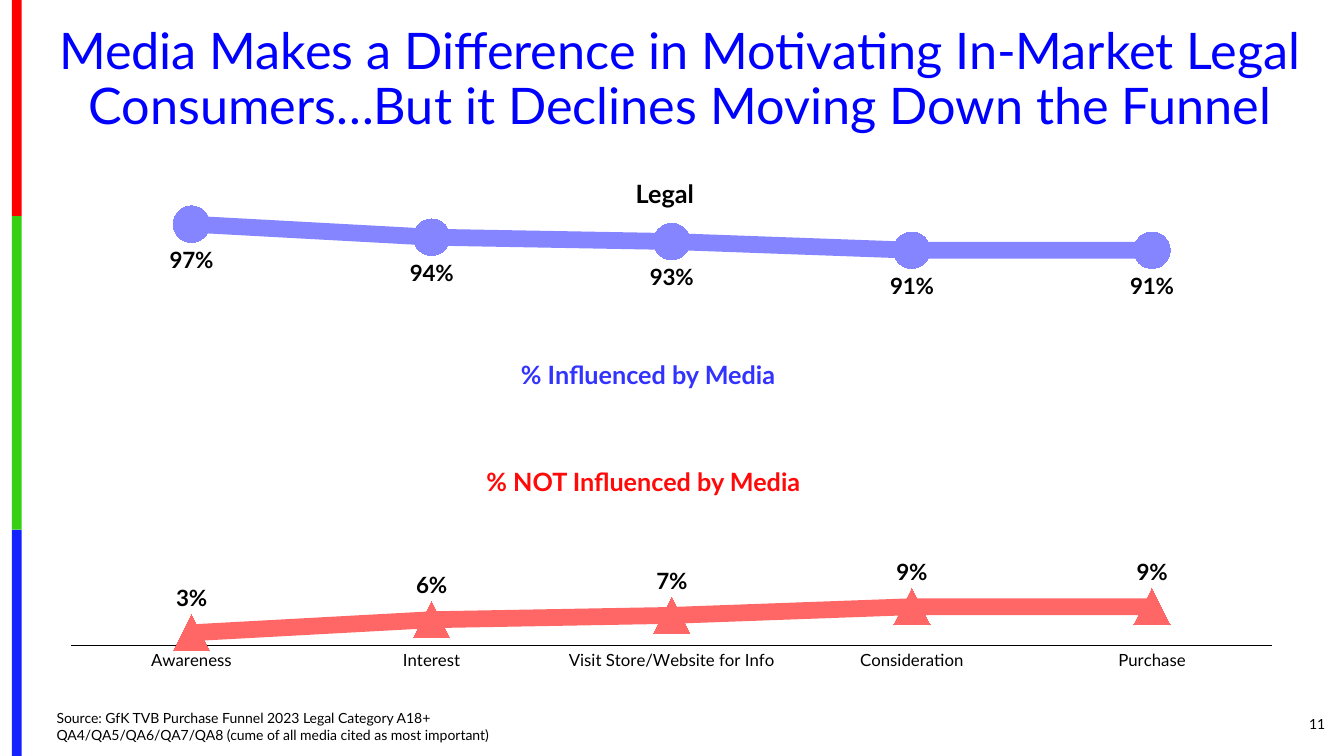
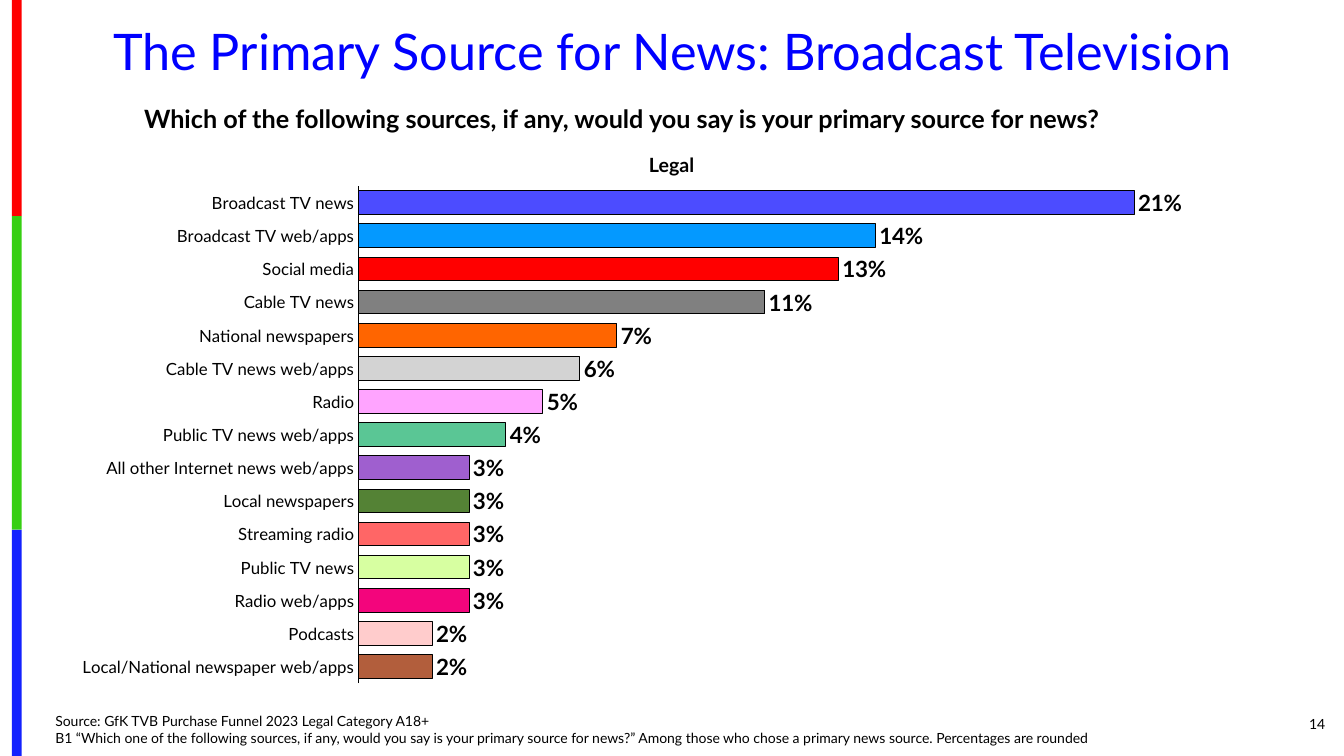
from dataclasses import dataclass

from lxml import etree
from pptx import Presentation
from pptx import util as u
from pptx.chart.data import CategoryChartData
from pptx.dml.color import RGBColor
from pptx.enum import chart as kinds
from pptx.enum import shapes, text
from pptx.oxml.ns import qn

FONT = "Lato"
HUES = {
    "red": "FE0000", "green": "36CF12", "blue": "1322FE",
    "title": "0000FF", "ink": "000000",
    "media": "3333FF", "other": "FF0909",
    "upper": "8585FF", "lower": "FF6666",
}
BANDS = (("red", 5.45), ("green", 7.9), ("blue", 5.7))
SOURCE = "Source: GfK TVB Purchase Funnel 2023 Legal Category A18+"
LEFT, MID, RIGHT = text.PP_ALIGN.LEFT, text.PP_ALIGN.CENTER, text.PP_ALIGN.RIGHT


@dataclass
class Box:
    """A place on the slide, in centimetres."""
    left: float
    top: float
    width: float
    height: float

    def cm(self) -> list:
        return [u.Cm(n) for n in (self.left, self.top, self.width, self.height)]


@dataclass
class Note:
    words: str
    box: Box
    size: float = 18
    hue: str = "ink"
    bold: bool = True
    align: int = LEFT
    anchor: int = text.MSO_ANCHOR.TOP


@dataclass
class Trend:
    name: str
    values: tuple
    hue: str
    marker: int
    side: int


@dataclass
class Bar:
    label: str
    value: float
    colour: str


TRENDS = (
    Trend("% Influenced by Media", (0.97, 0.94, 0.93, 0.91, 0.91), "upper",
          kinds.XL_MARKER_STYLE.CIRCLE, kinds.XL_LABEL_POSITION.BELOW),
    Trend("% NOT Influenced by Media", (0.03, 0.06, 0.07, 0.09, 0.09), "lower",
          kinds.XL_MARKER_STYLE.TRIANGLE, kinds.XL_LABEL_POSITION.ABOVE),
)
STAGES = ("Awareness", "Interest", "Visit Store/Website for Info",
          "Consideration", "Purchase")
BARS = (
    Bar("Broadcast TV news", 0.21, "4C4CFF"),
    Bar("Broadcast TV web/apps", 0.14, "0499FF"),
    Bar("Social media", 0.13, "FF0000"),
    Bar("Cable TV news", 0.11, "808080"),
    Bar("National newspapers", 0.07, "FF6500"),
    Bar("Cable TV news web/apps", 0.06, "D3D3D3"),
    Bar("Radio", 0.05, "FFA4FF"),
    Bar("Public TV news web/apps", 0.04, "5AC695"),
    Bar("All other Internet news web/apps", 0.03, "9F5FCF"),
    Bar("Local newspapers", 0.03, "548235"),
    Bar("Streaming radio", 0.03, "FF6666"),
    Bar("Public TV news", 0.03, "D7FFA1"),
    Bar("Radio web/apps", 0.03, "F3057C"),
    Bar("Podcasts", 0.02, "FFCCCC"),
    Bar("Local/National newspaper web/apps", 0.02, "B25E3C"),
)


def rgb(hue: str) -> RGBColor:
    return RGBColor.from_string(HUES.get(hue, hue))


def style(font, size: float, hue: str = "ink", bold: bool = False) -> None:
    font.name, font.size, font.bold = FONT, u.Pt(size), bold
    font.color.rgb = rgb(hue)


def place(shape, box: Box) -> None:
    shape.left, shape.top, shape.width, shape.height = box.cm()


def add_note(slide, note: Note) -> None:
    frame = slide.shapes.add_textbox(*note.box.cm()).text_frame
    frame.word_wrap = True
    frame.vertical_anchor = note.anchor
    frame.text = note.words
    frame.paragraphs[0].alignment = note.align
    style(frame.paragraphs[0].runs[0].font, note.size, note.hue, note.bold)


def add_bands(slide) -> None:
    top = 0.0
    for hue, height in BANDS:
        band = slide.shapes.add_shape(shapes.MSO_SHAPE.RECTANGLE,
                                      *Box(0.3, top, 0.25, height).cm())
        band.shadow.inherit = False
        band.fill.solid()
        band.fill.fore_color.rgb = rgb(hue)
        band.line.fill.background()
        top += height


def set_title(slide, words: str, box: Box) -> None:
    title = slide.shapes.title
    place(title, box)
    frame = title.text_frame
    frame.text = words
    frame.auto_size = text.MSO_AUTO_SIZE.NONE
    frame.vertical_anchor = text.MSO_ANCHOR.TOP
    line = frame.paragraphs[0]
    line.alignment, line.line_spacing = MID, 0.9
    style(line.runs[0].font, 36, "title")


def set_source(slide, detail: str, box: Box) -> None:
    """Fill the body placeholder with the two source lines, unbulleted."""
    body = slide.placeholders[1]
    place(body, box)
    frame = body.text_frame
    frame.text = f"{SOURCE}\n{detail}"
    frame.auto_size = text.MSO_AUTO_SIZE.NONE
    for line in frame.paragraphs:
        props = line._p.get_or_add_pPr()
        props.set("marL", "0")
        props.set("indent", "0")
        etree.SubElement(props, qn("a:buNone"))
        line.space_before = u.Pt(0)
        style(line.runs[0].font, 10)


def add_base(deck, title: str, spot: Box, detail: str, foot: Box, number: str):
    """Add a slide with the bands, title, source and page number."""
    slide = deck.slides.add_slide(deck.slide_layouts[1])
    add_bands(slide)
    set_title(slide, title, spot)
    set_source(slide, detail, foot)
    add_note(slide, Note(number, Box(30.91, 17.73, 2.74, 1.02), 10, bold=False,
                         align=RIGHT, anchor=text.MSO_ANCHOR.MIDDLE))
    return slide


def set_plot(chart, **parts: float) -> None:
    """Fix the inner plot area as shares of the chart."""
    area = chart.element.find(".//" + qn("c:plotArea"))
    for old in area.findall(qn("c:layout")):
        area.remove(old)
    layout = etree.Element(qn("c:layout"))
    area.insert(0, layout)
    manual = etree.SubElement(layout, qn("c:manualLayout"))
    pairs = {"layoutTarget": "inner", "xMode": "edge", "yMode": "edge", **parts}
    for tag, value in pairs.items():
        etree.SubElement(manual, qn(f"c:{tag}")).set("val", str(value))


def add_graph(slide, kind: int, box: Box, labels, series, peak: float):
    data = CategoryChartData(number_format="0%")
    data.categories = labels
    for name, values in series:
        data.add_series(name, values)
    chart = slide.shapes.add_chart(kind, *box.cm(), data).chart
    chart.has_title = chart.has_legend = False
    style(chart.font, 10)
    scale = chart.value_axis
    scale.minimum_scale, scale.maximum_scale = 0, peak
    scale.has_major_gridlines = scale.visible = False
    axis = chart.category_axis
    axis.major_tick_mark = kinds.XL_TICK_MARK.NONE
    axis.format.line.color.rgb = rgb("ink")
    axis.format.line.width = u.Pt(0.75)
    style(axis.tick_labels.font, 12)
    chart.plots[0].vary_by_categories = False
    return chart


def set_labels(series, side: int) -> None:
    labels = series.data_labels
    labels.show_value = True
    labels.number_format, labels.number_format_is_linked = "0%", False
    labels.position = side
    style(labels.font, 16, bold=True)


def add_lines(slide) -> None:
    chart = add_graph(slide, kinds.XL_CHART_TYPE.LINE_MARKERS,
                      Box(1.17, 5.08, 31.52, 12.04), STAGES,
                      [(t.name, t.values) for t in TRENDS], 1)
    set_plot(chart, x=0.02, y=0.02, w=0.96, h=0.91)
    for trend, series in zip(TRENDS, chart.plots[0].series):
        series.smooth = False
        series.format.line.color.rgb = rgb(trend.hue)
        series.format.line.width = u.Pt(12)
        marker = series.marker
        marker.style, marker.size = trend.marker, 26
        marker.format.fill.solid()
        marker.format.fill.fore_color.rgb = rgb(trend.hue)
        marker.format.line.fill.background()
        set_labels(series, trend.side)


def add_bars(slide) -> None:
    chart = add_graph(slide, kinds.XL_CHART_TYPE.BAR_CLUSTERED,
                      Box(0.64, 3.48, 33.02, 14.25), [b.label for b in BARS],
                      [("Legal", [b.value for b in BARS])], 0.25)
    set_plot(chart, x=0.254, y=0.085, w=0.705, h=0.879)
    chart.category_axis.reverse_order = True
    plot = chart.plots[0]
    plot.gap_width = 40
    series = plot.series[0]
    for spot, bar in enumerate(BARS):
        form = series.points[spot].format
        form.fill.solid()
        form.fill.fore_color.rgb = rgb(bar.colour)
        form.line.color.rgb = rgb("ink")
        form.line.width = u.Pt(0.75)
    set_labels(series, kinds.XL_LABEL_POSITION.OUTSIDE_END)


def add_funnel(deck) -> None:
    slide = add_base(
        deck, "Media Makes a Difference in Motivating In-Market Legal "
        "Consumers…But it Declines Moving Down the Funnel",
        Box(0.89, 0.53, 32.49, 4.42),
        "QA4/QA5/QA6/QA7/QA8 (cume of all media cited as most important)",
        Box(1.17, 17.75, 24, 1.12), "11")
    add_lines(slide)
    for note in (
        Note(TRENDS[0].name, Box(12.88, 8.92, 8.05, 1.02), hue="media"),
        Note(TRENDS[1].name, Box(12.01, 11.63, 9.6, 1.02), hue="other"),
        Note("Legal", Box(15.77, 4.37, 2.24, 1.02)),
    ):
        add_note(slide, note)


def add_news(deck) -> None:
    slide = add_base(
        deck, "The Primary Source for News: Broadcast Television",
        Box(1.17, 0.56, 31.55, 1.65),
        "B1 “Which one of the following sources, if any, would you say is your "
        "primary source for news?” Among those who chose a primary news source. "
        "Percentages are rounded",
        Box(1.14, 17.83, 27.43, 1.22), "14")
    add_note(slide, Note("Which of the following sources, if any, would you say "
                         "is your primary source for news?",
                         Box(3.38, 2.49, 28.3, 1.02)))
    add_bars(slide)
    add_note(slide, Note("Legal", Box(16, 3.73, 1.85, 0.86), 14, align=MID))


def main() -> None:
    deck = Presentation()
    deck.slide_width, deck.slide_height = u.Cm(33.87), u.Cm(19.05)
    add_funnel(deck)
    add_news(deck)
    deck.save("out.pptx")


if __name__ == "__main__":
    main()
